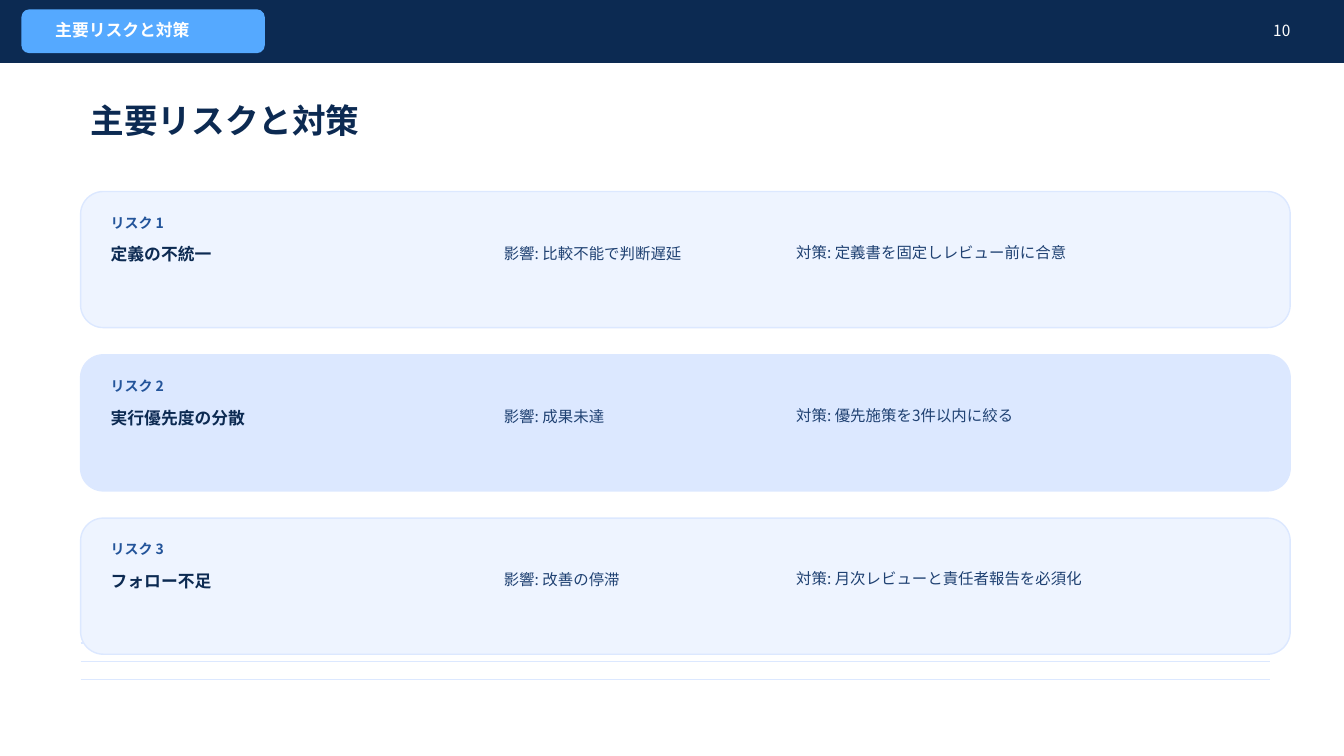
import pptx
import pptx.dml.color
import pptx.enum.shapes
import pptx.enum.text
import pptx.oxml.ns
import pptx.util
from lxml import etree

Pt = pptx.util.Pt
RGB = pptx.dml.color.RGBColor.from_string
SHAPES = pptx.enum.shapes.MSO_SHAPE
ANCHOR = pptx.enum.text.MSO_ANCHOR
ALIGN = pptx.enum.text.PP_ALIGN
qn = pptx.oxml.ns.qn

COLORS = {
    "navy": "0C2A52",
    "sky": "55A9FF",
    "white": "FFFFFF",
    "pale": "EEF4FF",
    "border": "DCE8FF",
    "label": "23549A",
    "body": "1F4172",
}
JAPANESE_FONT = "Noto Sans CJK JP"
STYLES = {
    "badge": {"size": Pt(12), "bold": True, "name": JAPANESE_FONT, "color": "white"},
    "page": {"size": Pt(11), "bold": False, "name": JAPANESE_FONT, "color": "white"},
    "title": {"size": Pt(24), "bold": True, "name": "Arial Narrow", "color": "navy"},
    "label": {"size": Pt(10), "bold": True, "name": JAPANESE_FONT, "color": "label"},
    "risk": {"size": Pt(12), "bold": True, "name": JAPANESE_FONT, "color": "navy"},
    "body": {"size": Pt(11), "bold": False, "name": JAPANESE_FONT, "color": "body"},
}

presentation = pptx.Presentation()
presentation.slide_width = Pt(960)
presentation.slide_height = Pt(540)
slide = presentation.slides.add_slide(presentation.slide_layouts[5])
shapes = slide.shapes


def add_panel(kind, left, top, width, height, fill, line):
    panel = shapes.add_shape(kind, Pt(left), Pt(top), Pt(width), Pt(height))
    panel.shadow.inherit = False
    panel.fill.solid()
    panel.fill.fore_color.rgb = RGB(COLORS[fill])
    panel.line.color.rgb = RGB(COLORS[line])
    panel.line.width = Pt(1)


def set_text(shape, box, text, style, anchor=ANCHOR.MIDDLE, align=ALIGN.LEFT):
    shape.left, shape.top, shape.width, shape.height = map(Pt, box)
    frame = shape.text_frame
    frame.word_wrap = True
    frame.auto_size = pptx.enum.text.MSO_AUTO_SIZE.NONE
    frame.vertical_anchor = anchor
    paragraph = frame.paragraphs[0]
    paragraph.alignment = align
    run = paragraph.add_run()
    run.text = text
    for attribute, value in STYLES[style].items():
        if attribute == "color":
            run.font.color.rgb = RGB(COLORS[value])
        else:
            setattr(run.font, attribute, value)
    properties = run._r.get_or_add_rPr()
    etree.SubElement(properties, qn("a:ea"), typeface=JAPANESE_FONT)


for index in range(4):
    y = Pt(446.4 + index * 12.96)
    rule = shapes.add_connector(
        pptx.enum.shapes.MSO_CONNECTOR.STRAIGHT, Pt(57.6), y, Pt(907.2), y
    )
    rule.line.color.rgb = RGB(COLORS["border"])
    rule.line.width = Pt(1)
    etree.SubElement(rule._element.spPr, qn("a:effectLst"))

add_panel(SHAPES.RECTANGLE, 0, 0, 960, 44.64, "navy", "navy")
add_panel(SHAPES.ROUNDED_RECTANGLE, 15.84, 7.2, 172.8, 30.24, "sky", "sky")

heading = "主要リスクと対策"
badge = shapes.add_textbox(0, 0, 0, 0)
set_text(badge, (32.4, 12.96, 633.6, 17.28), heading, "badge")
page = shapes.add_textbox(0, 0, 0, 0)
set_text(page, (874.8, 12.96, 54, 17.28), "10", "page", align=ALIGN.RIGHT)
set_text(shapes.title, (57.6, 68.4, 820.8, 34.56), heading, "title")

risks = [
    ("定義の不統一", "比較不能で判断遅延", "定義書を固定しレビュー前に合意"),
    ("実行優先度の分散", "成果未達", "優先施策を3件以内に絞る"),
    ("フォロー不足", "改善の停滞", "月次レビューと責任者報告を必須化"),
]
for index, (risk, impact, action) in enumerate(risks):
    top = 136.8 + index * 116.64
    fill = "border" if index % 2 else "pale"
    add_panel(SHAPES.ROUNDED_RECTANGLE, 57.6, top, 864, 97.2, fill, "border")
    cells = [
        (72, 14.4, 86.4, 15.84, f"リスク {index + 1}", "label", ANCHOR.MIDDLE),
        (72, 33.12, 266.4, 23.04, risk, "risk", ANCHOR.MIDDLE),
        (352.8, 33.12, 201.6, 21.6, f"影響: {impact}", "body", ANCHOR.MIDDLE),
        (561.6, 33.12, 345.6, 41.76, f"対策: {action}", "body", ANCHOR.TOP),
    ]
    for left, offset, width, height, text, style, anchor in cells:
        box = (left, top + offset, width, height)
        set_text(shapes.add_textbox(0, 0, 0, 0), box, text, style, anchor)

presentation.save("out.pptx")
